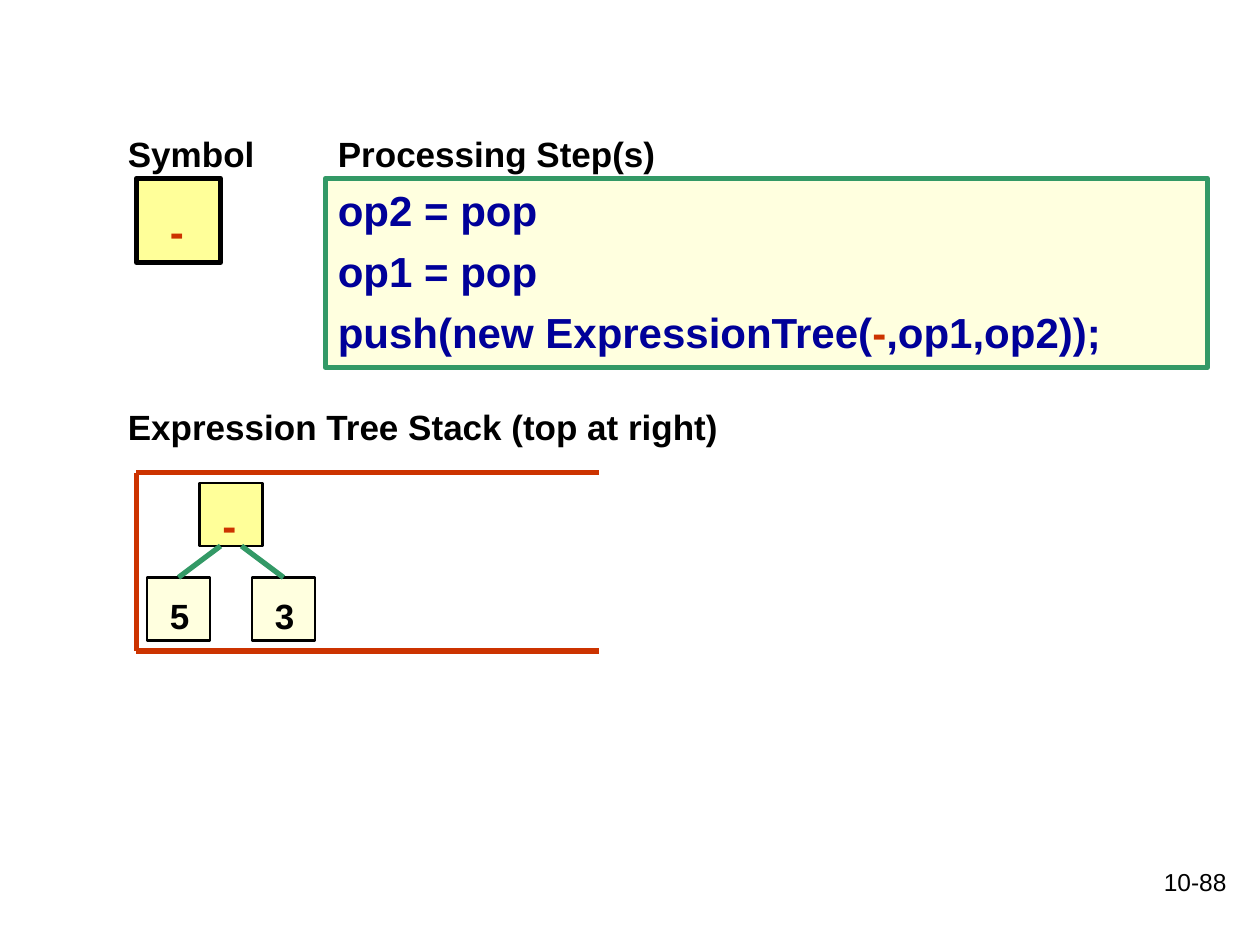
import pptx
import pptx.util
import pptx.dml.color
import pptx.enum.shapes
import pptx.enum.text
import pptx.oxml

RGB = pptx.dml.color.RGBColor
ALIGN = pptx.enum.text.PP_ALIGN
BLACK = RGB(0x00, 0x00, 0x00)
RED = RGB(0xCC, 0x33, 0x00)
GREEN = RGB(0x33, 0x99, 0x66)
NAVY = RGB(0x00, 0x00, 0x99)
YELLOW = RGB(0xFF, 0xFF, 0x99)
CREAM = RGB(0xFF, 0xFF, 0xDF)


class TreeSlide:
    """Draws on one slide laid out in a grid of 120 columns by 90 rows."""

    font = "Arial"
    columns, rows = 120, 90

    def __init__(self, deck):
        self.slide = deck.slides.add_slide(deck.slide_layouts[6])
        self.column = deck.slide_width / self.columns
        self.row = deck.slide_height / self.rows

    def place(self, x, y):
        return round(x * self.column), round(y * self.row)

    def fill_text(self, shape, paragraphs, size, bold=True, align=ALIGN.LEFT, before=0):
        frame = shape.text_frame
        frame.word_wrap = True
        frame.vertical_anchor = pptx.enum.text.MSO_ANCHOR.TOP
        for index, runs in enumerate(paragraphs):
            paragraph = frame.add_paragraph() if index else frame.paragraphs[0]
            paragraph.alignment = align
            paragraph.space_before = pptx.util.Pt(before)
            for words, color in runs:
                run = paragraph.add_run()
                run.text = words
                run.font.name = self.font
                run.font.size = pptx.util.Pt(size)
                run.font.bold = bold
                run.font.color.rgb = color

    def text(self, x, y, width, height, words, size=20, color=BLACK, **style):
        label = self.slide.shapes.add_textbox(*self.place(x, y), *self.place(width, height))
        self.fill_text(label, [[(words, color)]], size, **style)

    def box(self, x, y, width, height, fill, line=BLACK, weight=3):
        box = self.slide.shapes.add_shape(
            pptx.enum.shapes.MSO_SHAPE.RECTANGLE, *self.place(x, y), *self.place(width, height))
        box.shadow.inherit = False
        box.fill.solid()
        box.fill.fore_color.rgb = fill
        box.line.color.rgb = line
        box.line.width = pptx.util.Pt(weight)
        return box

    def line(self, start, end, color):
        line = self.slide.shapes.add_connector(
            pptx.enum.shapes.MSO_CONNECTOR.STRAIGHT, *self.place(*start), *self.place(*end))
        line.line.color.rgb = color
        line.line.width = pptx.util.Pt(3)
        line._element.spPr.append(pptx.oxml.parse_xml(
            '<a:effectLst xmlns:a="http://schemas.openxmlformats.org/drawingml/2006/main"/>'))

    def node(self, x, y, words, fill, size=20, color=BLACK):
        self.box(x, y, 6, 6, fill, weight=1.5)
        self.text(x + 1, y + 1, 5, 5, words, size, color)


def main():
    deck = pptx.Presentation()
    deck.slide_width = pptx.util.Inches(10)
    deck.slide_height = pptx.util.Inches(7.5)
    page = TreeSlide(deck)

    page.text(93, 82, 25, 6, "10-88", 14, bold=False, align=ALIGN.RIGHT)

    page.text(11, 12, 16, 5, "Symbol")
    page.box(13, 17, 8, 8, YELLOW)
    page.text(15, 19, 6, 6, "-", 24, RED)

    steps = page.box(31, 17, 84, 18, CREAM, GREEN)
    page.fill_text(steps, [
        [("op2 = pop", NAVY)],
        [("op1 = pop", NAVY)],
        [("push(new ExpressionTree(", NAVY), ("-", RED), (",op1,op2));", NAVY)],
    ], 24, before=6)
    page.text(31, 12, 37, 5, "Processing Step(s)")

    page.text(11, 38, 62, 5, "Expression Tree Stack (top at right)")
    left, right, top, bottom = 13, 57, 45, 62
    for edge in (top, bottom):
        page.line((right, edge), (left, edge), RED)
    page.line((left, top), (left, bottom), RED)

    page.node(19, 46, "-", YELLOW, 24, RED)
    for operand, x, branch in (("5", 14, 21), ("3", 24, 23)):
        page.node(x, 55, operand, CREAM)
        page.line((branch, 52), (x + 3, 55), GREEN)

    deck.save("out.pptx")


if __name__ == "__main__":
    main()
